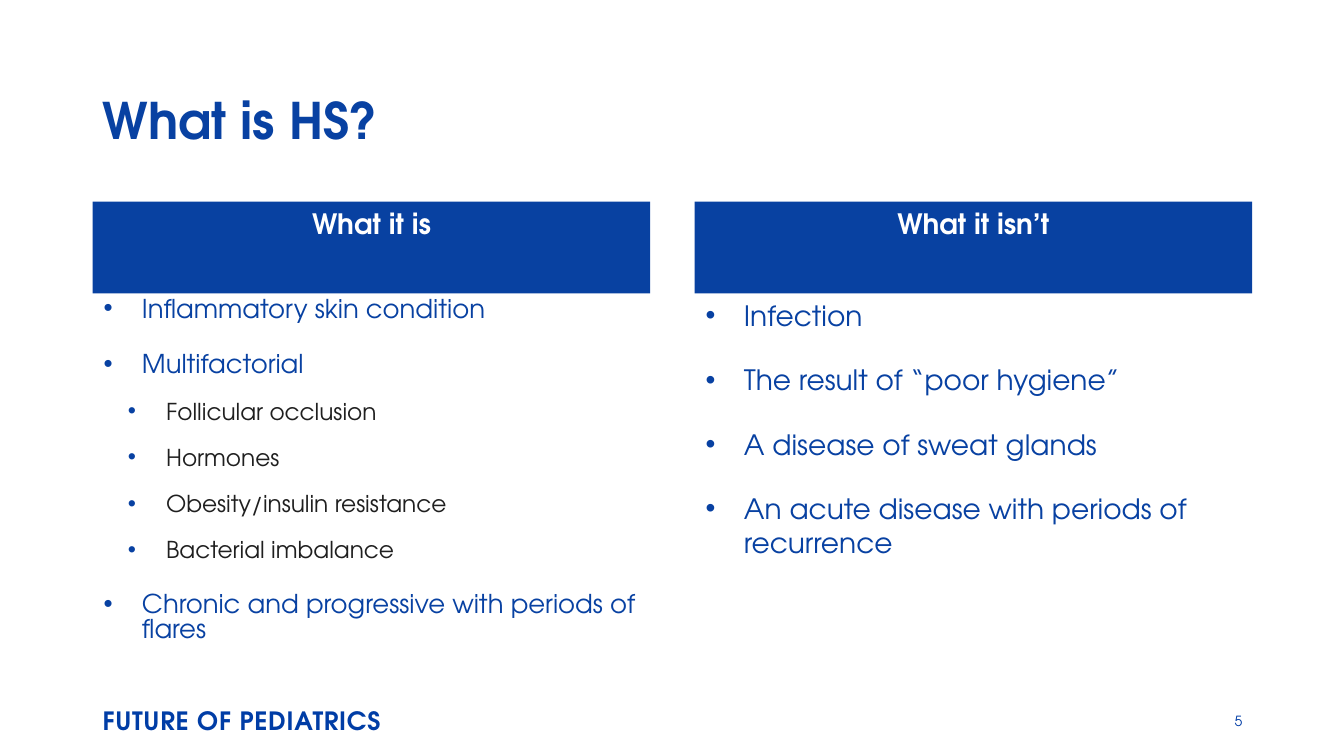
from lxml.etree import SubElement
from pptx import Presentation
from pptx.dml.color import RGBColor
from pptx.enum.shapes import MSO_SHAPE as Shape
from pptx.enum.text import MSO_ANCHOR as Anchor, PP_ALIGN as Align
from pptx.oxml.ns import qn
from pptx.util import Inches, Pt

FONT = "TeX Gyre Adventor"
BLUE, FOOTER_BLUE, BLACK, WHITE = "0841A2", "003DA6", "1F1F1F", "FFFFFF"
LEFT, COLUMN_WIDTH = 0.92, 5.53


def style(para, size, color, bold=False):
    for span in para.runs:
        span.font.name = FONT
        span.font.size = Pt(size)
        span.font.bold = bold
        span.font.color.rgb = RGBColor.from_string(color)


def add_text(left, top, width, height, text=""):
    box = page.shapes.add_textbox(Inches(left), Inches(top), Inches(width), Inches(height))
    box.text_frame.word_wrap = True
    box.text_frame.text = text
    return box.text_frame


deck = Presentation()
deck.slide_width, deck.slide_height = Inches(13.33), Inches(7.5)
page = deck.slides.add_slide(deck.slide_layouts[6])

# Footer and page number
footer = add_text(LEFT, 6.95, 3, 0.4, "FUTURE OF PEDIATRICS").paragraphs[0]
style(footer, 18, FOOTER_BLUE, bold=True)
footer.runs[0].font._element.set("spc", "50")

number = add_text(9.42, 6.95, 3, 0.4, "5")
number.vertical_anchor = Anchor.MIDDLE
number.paragraphs[0].alignment = Align.RIGHT
style(number.paragraphs[0], 10, FOOTER_BLUE)

# Title
title = add_text(LEFT, 0.4, 11.5, 1.45, "What is HS?")
title.vertical_anchor = Anchor.MIDDLE
title.paragraphs[0].line_spacing = 1.2
style(title.paragraphs[0], 36, BLUE, bold=True)

# Columns: left, heading, line spacing, text size per level, items as (level, text)
columns = [
    (LEFT, "What it is", 0.8, (18.5, 16.6), [
        (0, "Inflammatory skin condition"),
        (0, "Multifactorial"),
        (1, "Follicular occlusion"),
        (1, "Hormones"),
        (1, "Obesity/insulin resistance"),
        (1, "Bacterial imbalance"),
        (0, "Chronic and progressive with periods of flares"),
    ]),
    (6.89, "What it isn’t", 1.0, (20,), [
        (0, "Infection"),
        (0, "The result of “poor hygiene”"),
        (0, "A disease of sweat glands"),
        (0, "An acute disease with periods of recurrence"),
    ]),
]

for left, heading, spacing, sizes, items in columns:
    # Bulleted list
    frame = add_text(left, 2.91, COLUMN_WIDTH, 3.85)
    for index, (level, text) in enumerate(items):
        para = frame.add_paragraph() if index else frame.paragraphs[0]
        para.text = text
        para.level = level
        para.line_spacing = spacing
        para.space_before = Pt((10, 5)[level] if index else 0)
        para.space_after = Pt(12)
        props = para._p.get_or_add_pPr()
        props.set("marL", str(Inches((0.39, 0.63)[level])))
        props.set("indent", str(Inches(-0.38)))
        bullet_color = SubElement(props, qn("a:buClr"))
        SubElement(bullet_color, qn("a:srgbClr"), val=BLUE)
        SubElement(props, qn("a:buFont"), typeface="Arial")
        SubElement(props, qn("a:buChar"), char="•")
        style(para, sizes[level], (BLUE, BLACK)[level])

    # Heading bar
    bar = page.shapes.add_shape(Shape.RECTANGLE, Inches(left), Inches(2),
                                Inches(COLUMN_WIDTH), Inches(0.91))
    bar.shadow.inherit = False
    bar.fill.solid()
    bar.fill.fore_color.rgb = RGBColor.from_string("0841A1")
    bar.line.fill.background()
    bar.text_frame.text = heading
    bar.text_frame.word_wrap = True
    bar.text_frame.vertical_anchor = Anchor.TOP
    bar.text_frame.paragraphs[0].alignment = Align.CENTER
    style(bar.text_frame.paragraphs[0], 20, WHITE, bold=True)

deck.save("out.pptx")
